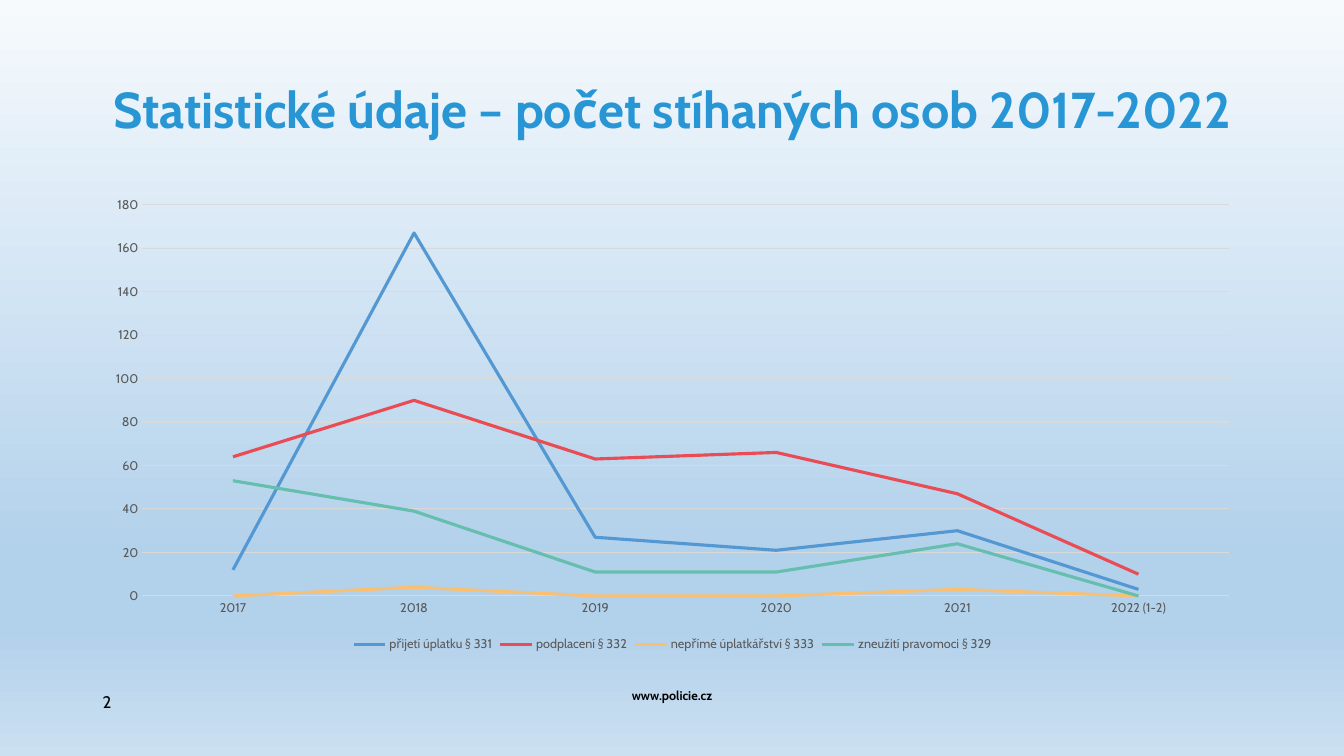
from dataclasses import dataclass

import lxml.etree
import pptx
import pptx.chart.data
import pptx.dml.color
import pptx.enum.chart
import pptx.enum.text
import pptx.oxml
import pptx.oxml.ns
import pptx.util

Inches, Pt, qn = pptx.util.Inches, pptx.util.Pt, pptx.oxml.ns.qn
ALIGN, ANCHOR = pptx.enum.text.PP_ALIGN, pptx.enum.text.MSO_ANCHOR
FONT = "Cabin"
COLORS = {
    "title": "2896D4", "text": "000000", "label": "595959", "grid": "D9D9D9",
    "blue": "5398D2", "red": "E94C55", "yellow": "F9BF73", "green": "66BFAE",
    "sky_top": "F6FAFD", "sky_mid": "B2D1EB", "sky_low": "CBE0F1",
}
SKY = [(0, "sky_top"), (74, "sky_mid"), (83, "sky_mid"), (100, "sky_low")]
YEARS = ["2017", "2018", "2019", "2020", "2021", "2022 (1-2)"]


@dataclass
class Offence:
    name: str
    counts: tuple[int, ...]
    color: str


@dataclass
class Label:
    text: str
    box: tuple[float, float, float, float]
    size: float
    color: str = "text"
    bold: bool = False
    align: ALIGN = ALIGN.CENTER
    anchor: ANCHOR = ANCHOR.MIDDLE
    spacing: float = 1.0


OFFENCES = [
    Offence("přijetí úplatku § 331", (12, 167, 27, 21, 30, 3), "blue"),
    Offence("podplacení § 332", (64, 90, 63, 66, 47, 10), "red"),
    Offence("nepřímé úplatkářství § 333", (0, 4, 0, 0, 3, 0), "yellow"),
    Offence("zneužití pravomoci § 329", (53, 39, 11, 11, 24, 0), "green"),
]
TITLE = Label("Statistické údaje – počet stíhaných osob 2017-2022",
              (0.92, 0.4, 11.5, 1.27), 36, "title", True, spacing=1.13)
FOOTERS = [
    Label("2", (0.92, 6.75, 0.48, 0.43), 12, align=ALIGN.LEFT),
    Label("www.policie.cz", (5.59, 6.75, 2.15, 0.25), 9, bold=True,
          anchor=ANCHOR.TOP, spacing=1.14),
]


def rgb(name: str) -> pptx.dml.color.RGBColor:
    """Return a palette colour."""
    return pptx.dml.color.RGBColor.from_string(COLORS[name])


def set_font(font: pptx.text.text.Font, size: float, color: str, bold: bool = False) -> None:
    """Apply the slide typeface with a size, colour and weight."""
    font.name, font.size, font.bold = FONT, Pt(size), bold
    font.color.rgb = rgb(color)


def set_line(line: pptx.dml.line.LineFormat, color: str, width: float) -> None:
    """Give a line its colour and width."""
    line.color.rgb = rgb(color)
    line.width = Pt(width)


def fill_label(sp: pptx.shapes.base.BaseShape, label: Label) -> None:
    """Place a text shape and write its label."""
    sp.left, sp.top, sp.width, sp.height = map(Inches, label.box)
    tf = sp.text_frame
    tf.word_wrap = True
    tf.auto_size = pptx.enum.text.MSO_AUTO_SIZE.NONE
    tf.vertical_anchor = label.anchor
    p = tf.paragraphs[0]
    p.text, p.alignment, p.line_spacing = label.text, label.align, label.spacing
    p.space_before = Pt(0)
    set_font(p.font, label.size, label.color, label.bold)


def paint_sky(s: pptx.slide.Slide) -> None:
    """Fill the background with the vertical sky gradient."""
    fill = s.background.fill
    fill.gradient()
    fill.gradient_angle = 270
    stops = next(s.element.iter(qn("a:gsLst")))
    for stop in list(stops):
        stops.remove(stop)
    for percent, color in SKY:
        gs = lxml.etree.SubElement(stops, qn("a:gs"), pos=str(percent * 1000))
        lxml.etree.SubElement(gs, qn("a:srgbClr"), val=COLORS[color])


def add_line_chart(s: pptx.slide.Slide) -> None:
    """Draw the prosecuted persons by offence and year."""
    data = pptx.chart.data.CategoryChartData()
    data.categories = YEARS
    for offence in OFFENCES:
        data.add_series(offence.name, offence.counts)
    box = map(Inches, (0.92, 1.86, 11.5, 4.65))
    chart = s.shapes.add_chart(pptx.enum.chart.XL_CHART_TYPE.LINE, *box, data).chart
    set_font(chart.font, 10, "text")
    chart.has_title = False
    chart.has_legend = True
    chart.legend.position = pptx.enum.chart.XL_LEGEND_POSITION.BOTTOM
    chart.legend.include_in_layout = False
    set_font(chart.legend.font, 9, "label")
    for axis in (chart.category_axis, chart.value_axis):
        axis.major_tick_mark = pptx.enum.chart.XL_TICK_MARK.NONE
        axis.minor_tick_mark = pptx.enum.chart.XL_TICK_MARK.NONE
        set_font(axis.tick_labels.font, 9, "label")
    set_line(chart.category_axis.format.line, "grid", 0.75)
    values = chart.value_axis
    values.minimum_scale, values.maximum_scale, values.major_unit = 0, 180, 20
    values.format.line.fill.background()
    set_line(values.major_gridlines.format.line, "grid", 0.75)
    plot = chart.plots[0]
    plot.vary_by_categories = False
    for series, offence in zip(plot.series, OFFENCES):
        series.smooth = False
        series.marker.style = pptx.enum.chart.XL_MARKER_STYLE.NONE
        set_line(series.format.line, offence.color, 2.25)


def main() -> None:
    """Build and save the slide."""
    prs = pptx.Presentation()
    prs.slide_width, prs.slide_height = Inches(13.33), Inches(7.5)
    s = prs.slides.add_slide(prs.slide_layouts[5])
    paint_sky(s)
    fill_label(s.shapes.title, TITLE)
    for label in FOOTERS:
        fill_label(s.shapes.add_textbox(*map(Inches, label.box)), label)
    add_line_chart(s)
    prs.save("out.pptx")


if __name__ == "__main__":
    main()
